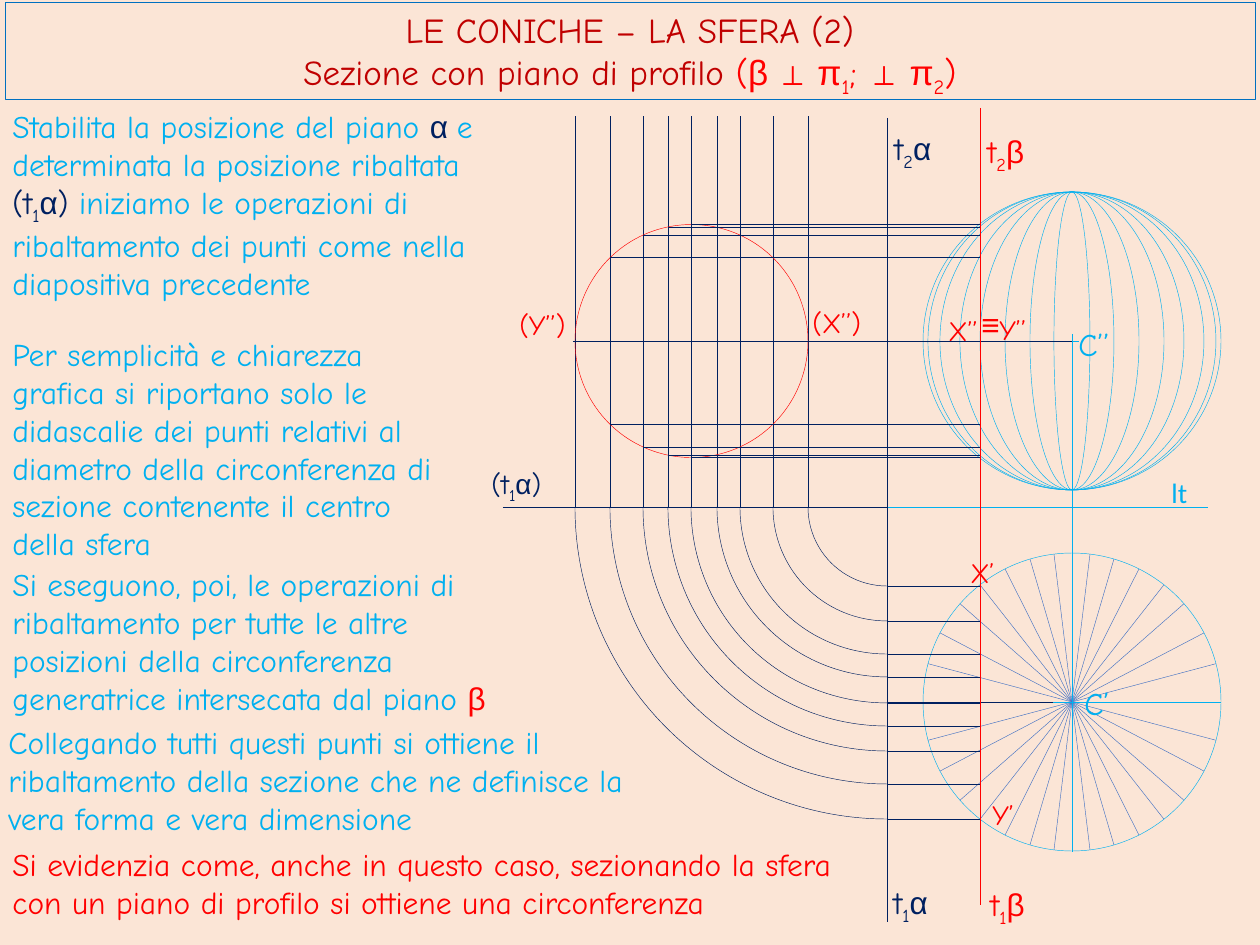
import math
import pptx
import pptx.util
import pptx.dml.color
import pptx.enum.shapes
import pptx.enum.text
import pptx.oxml.ns
import lxml.etree

THEME = dict(
    paper="FBE5D6", sky="00B0F0", navy="002060", red="FF0000", wine="C00000",
    edge="0070C0", spoke="4472C4", hair=0.25, head=20, body=18, small=16,
    font="Comic Neue", greek="Arial", plain="Calibri",
)

# Content: runs are (text, colour, kind)
# kinds: "" normal, "g" Greek letter, "sub" subscript, "sym" bold symbol, "lt" plain
TITLE = [
    [("LE CONICHE – LA SFERA (2)", "wine", "")],
    [("Sezione con piano di profilo ", "wine", ""), ("(", "red", ""),
     ("β", "red", "g"), (" ⊥ ", "red", "sym"), ("π", "red", "g"),
     ("1", "red", "sub"), ("; ", "red", ""), ("⊥", "red", "sym"),
     (" π", "red", "g"), ("2", "red", "sub"), (")", "red", "")],
]
# Paragraphs: left, top, width, height, runs
BODY = [
    (0, 101, 496, 243, [
        ("Stabilita la posizione del piano ", "sky", ""), ("α ", "navy", "g"),
        ("e determinata la posizione ribaltata ", "sky", ""),
        ("(t", "navy", ""), ("1", "navy", "sub"), ("α", "navy", "g"),
        (") ", "navy", ""),
        ("iniziamo le operazioni di ribaltamento dei punti come nella "
         "diapositiva precedente", "sky", "")]),
    (0, 329, 475, 242, [
        ("Per semplicità e chiarezza grafica si riportano solo le didascalie "
         "dei punti relativi al diametro della circonferenza di sezione "
         "contenente il centro della sfera", "sky", "")]),
    (0, 559, 546, 165, [
        ("Si eseguono, poi, le operazioni di ribaltamento per tutte le altre "
         "posizioni della circonferenza generatrice intersecata dal piano ",
         "sky", ""), ("β", "red", "g")]),
    (-4, 717, 658, 127, [
        ("Collegando tutti questi punti si ottiene il ribaltamento della "
         "sezione che ne definisce la vera forma e vera dimensione", "sky", "")]),
    (0, 839, 857, 89, [
        ("Si evidenzia come, anche in questo caso, sezionando la sfera con un "
         "piano di profilo si ottiene una circonferenza", "red", "")]),
]
# Labels: left, top, width, size, runs
LABELS = [
    (1072, 678, 59, "body", [("C’", "sky", "")]),
    (1066, 319, 59, "body", [("C’’", "sky", "")]),
    (1159, 469, 48, "small", [("lt", "sky", "lt")]),
    (958, 549, 63, "small", [("X’", "red", "")]),
    (980, 791, 67, "small", [("Y’", "red", "")]),
    (936, 307, 69, "small", [("X’’", "red", "")]),
    (987, 306, 59, "small", [("Y’’", "red", "")]),
    (969, 299, 52, "body", [("≡", "red", "sym")]),
    (800, 299, 79, "small", [("(X’’)", "red", "")]),
    (507, 301, 74, "small", [("(Y’’)", "red", "")]),
    (479, 460, 95, "small", [("(t", "navy", ""), ("1", "navy", "sub"),
                             ("α", "navy", "g"), (")", "navy", "")]),
]
# Plane traces: left, top, index, letter, colour
TRACES = [(975, 126, "2", "β", "red"), (978, 879, "1", "β", "red"),
          (882, 123, "2", "α", "navy"), (881, 877, "1", "α", "navy")]

# Drawing data
ALPHA, BETA, GROUND = 887, 980, 507
AXIS, FRONT, PLAN, BALL = 1072, 341, 702, 149
HALVES = [18, 42, 67, 92, 112, 132, 144]           # meridian half widths
TURNS = [79, 114, 147, 170, 196, 219, 244, 277, 312]  # turning radii
CUT = (TURNS[-1] - TURNS[0]) / 2                   # section radius
MID = ALPHA - TURNS[0] - CUT                       # section centre
LINES = [
    (ALPHA, GROUND, 1208, GROUND, "sky"), (AXIS, FRONT, AXIS, 852, "sky"),
    (AXIS - BALL, PLAN, AXIS + BALL, PLAN, "sky"),
    (1066, FRONT, 1079, FRONT, "sky"), (AXIS, 334, AXIS, 348, "sky"),
    (503, GROUND, ALPHA, GROUND, "navy"), (573, FRONT, AXIS, FRONT, "navy"),
    (ALPHA, PLAN, 1053, PLAN, "navy"), (ALPHA, 118, ALPHA, 922, "navy"),
    (BETA, 108, BETA, 905, "red"),
]

SHAPE = pptx.enum.shapes.MSO_SHAPE
deck = pptx.Presentation()
px = lambda n: round(n * 914400 / 126)
deck.slide_width, deck.slide_height = px(1260), px(945)
slide = deck.slides.add_slide(deck.slide_layouts[5])


def hue(name):
    return pptx.dml.color.RGBColor.from_string(THEME[name])


def ink(item, tone):
    item.line.color.rgb = hue(tone)
    item.line.width = pptx.util.Pt(THEME["hair"])


def line(x1, y1, x2, y2, tone):
    item = slide.shapes.add_connector(
        pptx.enum.shapes.MSO_CONNECTOR.STRAIGHT, px(x1), px(y1), px(x2), px(y2))
    ink(item, tone)
    props = item._element.spPr
    lxml.etree.SubElement(props, pptx.oxml.ns.qn("a:effectLst"))


def curve(kind, x, y, rx, ry, tone):
    item = slide.shapes.add_shape(
        kind, px(x - rx), px(y - ry), px(2 * rx), px(2 * ry))
    item.shadow.inherit = False
    item.fill.background()
    ink(item, tone)
    return item


def write(para, parts, size):
    for text, tone, kind in parts:
        run = para.add_run()
        run.text = text
        font = run.font
        font.name = THEME[{"g": "greek", "sym": "greek", "lt": "plain"}.get(kind, "font")]
        font.size = pptx.util.Pt(THEME["body" if kind == "sym" else size])
        font.color.rgb = hue(tone)
        if kind == "sym":
            font.bold = True
        if kind == "sub":
            run._r.get_or_add_rPr().set("baseline", "-25000")


def label(x, y, w, h, size, parts):
    frame = slide.shapes.add_textbox(px(x), px(y), px(w), px(h)).text_frame
    frame.word_wrap = True
    write(frame.paragraphs[0], parts, size)


# Background and title
slide.background.fill.solid()
slide.background.fill.fore_color.rgb = hue("paper")
title = slide.shapes.title
title.left, title.top, title.width, title.height = px(5), px(2), px(1250), px(97)
title.fill.solid()
title.fill.fore_color.rgb = hue("paper")
ink(title, "edge")
frame = title.text_frame
frame.auto_size = pptx.enum.text.MSO_AUTO_SIZE.NONE
frame.vertical_anchor = pptx.enum.text.MSO_ANCHOR.TOP
frame.add_paragraph()
for para, parts in zip(frame.paragraphs, TITLE):
    para.alignment = pptx.enum.text.PP_ALIGN.CENTER
    write(para, parts, "head")

# Sphere: meridians in front view, matching diameters in plan
for half in HALVES + [BALL]:
    curve(SHAPE.OVAL, AXIS, FRONT, half, BALL, "sky")
curve(SHAPE.OVAL, AXIS, PLAN, BALL, BALL, "sky")
for half in HALVES:
    rise = math.sqrt(BALL ** 2 - half ** 2)
    for dx in (half, -half):
        line(AXIS - dx, PLAN + rise, AXIS + dx, PLAN - rise, "spoke")

# Turning of each point about the alpha trace
for turn in TURNS:
    x = ALPHA - turn
    line(x, GROUND, x, 116, "navy")
    line(ALPHA, GROUND + turn, BETA, GROUND + turn, "navy")
    arc = curve(SHAPE.ARC, ALPHA, GROUND, turn, turn, "navy")
    arc.adjustments[0], arc.adjustments[1] = 54, 108  # 90 to 180 degrees

# True section and its levels
curve(SHAPE.OVAL, MID, FRONT, CUT, CUT, "red")
for turn in TURNS[4:8]:
    x = ALPHA - turn
    rise = math.sqrt(CUT ** 2 - (x - MID) ** 2)
    for y in (FRONT - rise, FRONT + rise):
        line(x, y, BETA, y, "navy")

# Axes and traces
for ends in LINES:
    line(*ends)

# Text
for x, y, w, h, parts in BODY:
    label(x, y, w, h, "body", parts)
for x, y, w, size, parts in LABELS:
    label(x, y, w, 50, size, parts)
for x, y, index, letter, tone in TRACES:
    label(x, y, 72, 50, "body",
          [("t", tone, ""), (index, tone, "sub"), (letter, tone, "g")])

deck.save("out.pptx")
